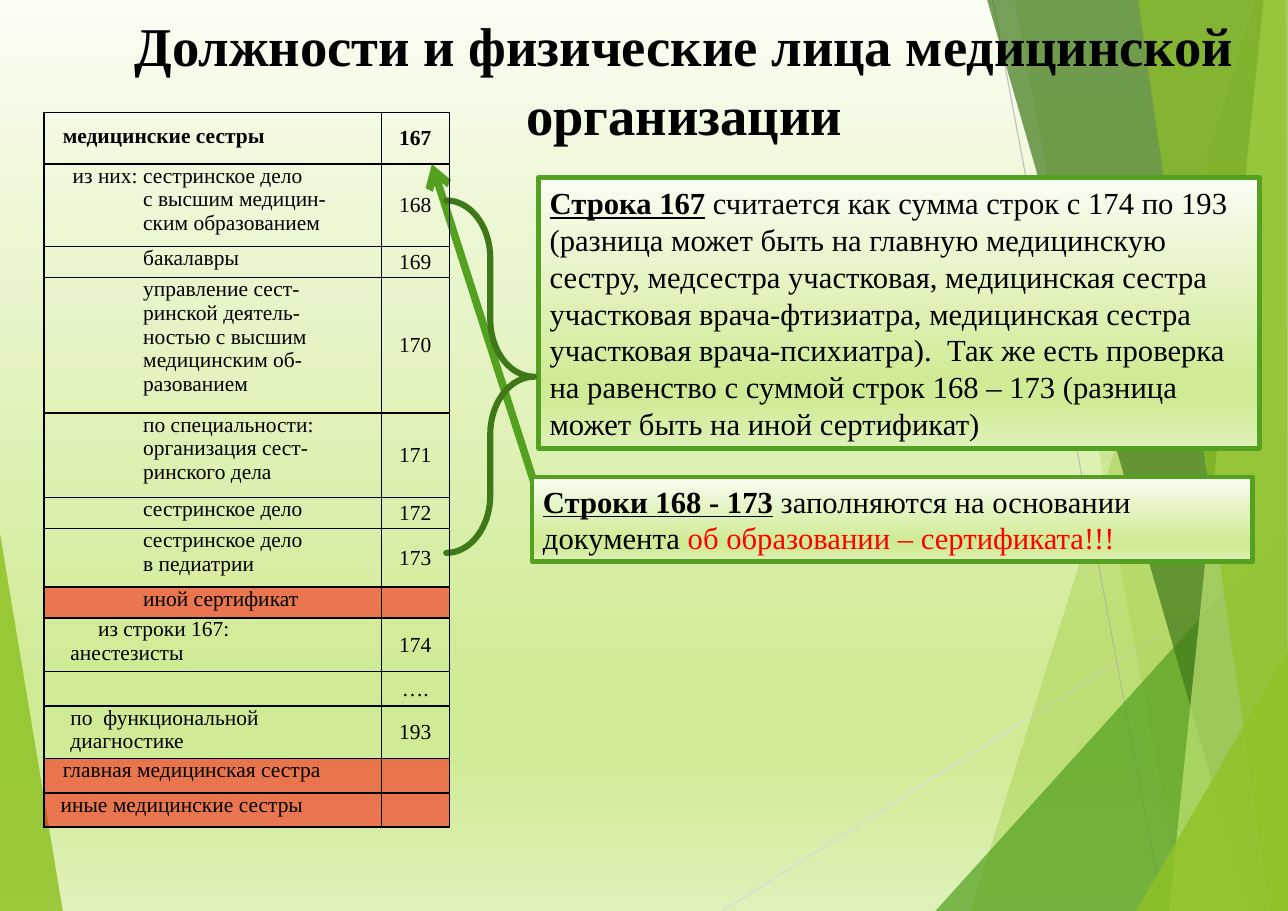
from lxml.etree import SubElement
from pptx import Presentation
from pptx.dml.color import RGBColor
from pptx.enum.shapes import MSO_CONNECTOR, MSO_SHAPE
from pptx.enum.text import MSO_ANCHOR, PP_ALIGN
from pptx.oxml.ns import qn
from pptx.util import Pt

PX = 9144  # EMU per px, 100 px to the inch
WIDTH, HEIGHT = 1169, 827
FONT = "Times New Roman"
COLORS = {
    "black": "000000", "red": "FF0000", "lime": "90C226", "green": "54A021",
    "forest": "3F7819", "pale": "C0E474", "silver": "D9D9D9", "grey": "BFBFBF",
    "sky": "FAFDF3", "meadow": "D0EB96", "ground": "DFF1B9",
}
GRADIENT = [(0, "sky"), (74, "meadow"), (83, "meadow"), (100, "ground")]

TITLE = "Должности и физические лица медицинской организации"

# colour, opacity in percent, corners
LEFT_FACET = ("lime", 85, [(0, 484), (57, HEIGHT), (0, HEIGHT)])
RIGHT_FACETS = [
    ("lime", 30, [(1140, 0), (881, HEIGHT), (WIDTH, HEIGHT), (WIDTH, 0)]),
    ("lime", 20, [(921, 0), (1075, HEIGHT), (WIDTH, HEIGHT), (WIDTH, 0)]),
    ("green", 72, [(849, HEIGHT), (WIDTH, 473), (WIDTH, HEIGHT)]),
    ("forest", 70, [(896, 0), (1134, HEIGHT), (WIDTH, HEIGHT), (WIDTH, 0)]),
    ("pale", 70, [(1147, 0), (1061, HEIGHT), (WIDTH, HEIGHT), (WIDTH, 0)]),
    ("lime", 65, [(1033, 0), (1153, HEIGHT), (WIDTH, HEIGHT), (1167, 0)]),
    ("lime", 80, [(1031, HEIGHT), (WIDTH, 590), (WIDTH, HEIGHT)]),
]
RAYS = [("silver", (656, HEIGHT, WIDTH, 503)), ("grey", (901, 0, 1056, HEIGHT))]

HEADING = {"bold": True, "underline": True}
SUM_NOTE = [
    ("Строка 167", HEADING),
    (" считается как сумма строк с 174 по 193 (разница может быть на главную "
     "медицинскую сестру, медсестра участковая, медицинская сестра участковая "
     "врача-фтизиатра, медицинская сестра участковая врача-психиатра).  Так же "
     "есть проверка на равенство с суммой строк 168 – 173 (разница может быть "
     "на иной сертификат)", {}),
]
CERTIFICATE_NOTE = [
    ("Строки 168 - 173", HEADING),
    (" заполняются на основании документа ", {}),
    ("об образовании – сертификата!!!", {"color": "red"}),
]

# height, lines as (indent, text), row number, highlighted
DEEP = 83
POSITIONS = [
    (47, [(10, "медицинские сестры")], "167", False),
    (75, [(19, "из них: сестринское дело"), (DEEP, "с высшим медицин-"),
          (DEEP, "ским образованием")], "168", False),
    (28, [(DEEP, "бакалавры")], "169", False),
    (123, [(DEEP, "управление сест-"), (DEEP, "ринской деятель-"),
           (DEEP, "ностью с высшим"), (DEEP, "медицинским об-"),
           (DEEP, "разованием")], "170", False),
    (77, [(DEEP, "по специальности:"), (DEEP, "организация сест-"),
          (DEEP, "ринского дела")], "171", False),
    (28, [(DEEP, "сестринское дело")], "172", False),
    (53, [(DEEP, "сестринское дело"), (DEEP, "в педиатрии")], "173", False),
    (28, [(DEEP, "иной сертификат")], "", True),
    (49, [(42, "из строки 167:"), (17, "анестезисты")], "174", False),
    (31, [(0, "")], "….", False),
    (48, [(17, "по  функциональной диагностике")], "193", False),
    (31, [(10, "главная медицинская сестра")], "", True),
    (31, [(8, "иные медицинские сестры")], "", True),
]
COLUMNS = (306, 62)


def emu(*lengths):
    return [length * PX for length in lengths]


def rgb(name):
    return RGBColor.from_string(COLORS[name])


def fill_solid(fill, color, opacity):
    fill.solid()
    fill.fore_color.rgb = rgb(color)
    color_node = fill._xPr.find(qn("a:solidFill"))[0]
    SubElement(color_node, qn("a:alpha"), val=str(opacity * 1000))


def fill_gradient(fill):
    fill.gradient()
    fill.gradient_angle = 270
    stops = fill.gradient_stops[0]._gs.getparent()
    stops.clear()
    for position, color in GRADIENT:
        stop = SubElement(stops, qn("a:gs"), pos=str(position * 1000))
        SubElement(stop, qn("a:srgbClr"), val=COLORS[color])


def add_text(paragraph, text, *, size, color="black", bold=False, underline=False):
    run = paragraph.add_run()
    run.text = text
    font = run.font
    font.name, font.size, font.bold, font.underline = FONT, Pt(size), bold, underline
    font.color.rgb = rgb(color)


def add_facet(color, opacity, corners):
    builder = slide.shapes.build_freeform(*corners[0], scale=PX)
    builder.add_line_segments(corners[1:], close=True)
    facet = builder.convert_to_shape()
    facet.shadow.inherit = False
    fill_solid(facet.fill, color, opacity)
    facet.line.fill.background()


def add_line(ends, color, width):
    line = slide.shapes.add_connector(MSO_CONNECTOR.STRAIGHT, *emu(*ends))
    line.line.color.rgb = rgb(color)
    line.line.width = Pt(width)
    SubElement(line._element.spPr, qn("a:effectLst"))
    return line


def add_outlined(kind, box, color, width):
    shape = slide.shapes.add_shape(kind, *emu(*box))
    shape.shadow.inherit = False
    shape.line.color.rgb = rgb(color)
    shape.line.width = Pt(width)
    return shape


def add_note(box, runs):
    note = add_outlined(MSO_SHAPE.RECTANGLE, box, "green", 3)
    fill_gradient(note.fill)
    frame = note.text_frame
    frame.word_wrap = True
    frame.vertical_anchor = MSO_ANCHOR.MIDDLE
    paragraph = frame.paragraphs[0]
    paragraph.alignment = PP_ALIGN.LEFT
    for text, style in runs:
        add_text(paragraph, text, size=20, **style)


def format_cell(cell, lines, *, bold, highlighted, **paragraph_format):
    cell.margin_left = cell.margin_right = 7 * PX
    cell.margin_top = cell.margin_bottom = 0
    properties = cell._tc.get_or_add_tcPr()
    for side in ("lnL", "lnR", "lnT", "lnB"):
        border = SubElement(properties, qn(f"a:{side}"), w=str(Pt(1)))
        SubElement(SubElement(border, qn("a:solidFill")), qn("a:srgbClr"),
                   val=COLORS["black"])
    if highlighted:
        fill_solid(cell.fill, "red", 50)
    else:
        cell.fill.background()
    frame = cell.text_frame
    for index, (indent, text) in enumerate(lines):
        paragraph = frame.add_paragraph() if index else frame.paragraphs[0]
        paragraph.font.size = Pt(14)
        paragraph._p.get_or_add_pPr().set("marL", str(indent * PX))
        for name, value in paragraph_format.items():
            setattr(paragraph, name, value)
        if text:
            add_text(paragraph, text, size=14, bold=bold)


def add_positions():
    heights = [position[0] for position in POSITIONS]
    table = slide.shapes.add_table(len(POSITIONS), len(COLUMNS), *emu(
        40, 102, sum(COLUMNS), sum(heights))).table
    table.first_row = table.horz_banding = False
    for column, width in zip(table.columns, COLUMNS):
        column.width = width * PX
    for index, (height, lines, number, highlighted) in enumerate(POSITIONS):
        row = table.rows[index]
        row.height = height * PX
        label, code = row.cells
        total = index == 0
        look = {"bold": total, "highlighted": highlighted}
        format_cell(label, lines, line_spacing=1.5 if total else 1.0, **look)
        format_cell(code, [(0, number)], alignment=PP_ALIGN.CENTER, **look)
        code.vertical_anchor = MSO_ANCHOR.MIDDLE


presentation = Presentation()
presentation.slide_width, presentation.slide_height = emu(WIDTH, HEIGHT)
slide = presentation.slides.add_slide(presentation.slide_layouts[5])
fill_gradient(slide.background.fill)

add_facet(*LEFT_FACET)
for color, ends in RAYS:
    add_line(ends, color, 0.75)
for facet in RIGHT_FACETS:
    add_facet(*facet)

title = slide.shapes.title
slide.shapes._spTree.append(title._element)  # in front of the facets
title.left, title.top, title.width, title.height = emu(73, 0, 1096, 95)
title.text_frame.vertical_anchor = MSO_ANCHOR.TOP
title.text_frame.margin_top = 8 * PX
heading = title.text_frame.paragraphs[0]
heading.alignment = PP_ALIGN.CENTER
heading.line_spacing = 1.05
add_text(heading, TITLE, size=35.7, bold=True)

add_note((489, 161, 654, 246), SUM_NOTE)
arrow = add_line((487, 445, 392, 149), "green", 5)
SubElement(arrow.line._get_or_add_ln(), qn("a:tailEnd"), type="arrow")
add_note((483, 433, 654, 77), CERTIFICATE_NOTE)

brace = add_outlined(MSO_SHAPE.RIGHT_BRACE, (405, 182, 80, 320), "forest", 4)
brace.fill.background()
brace.adjustments[0], brace.adjustments[1] = 0.655, 0.5
brace.line._get_or_add_ln().set("cap", "rnd")

add_positions()
presentation.save("out.pptx")
